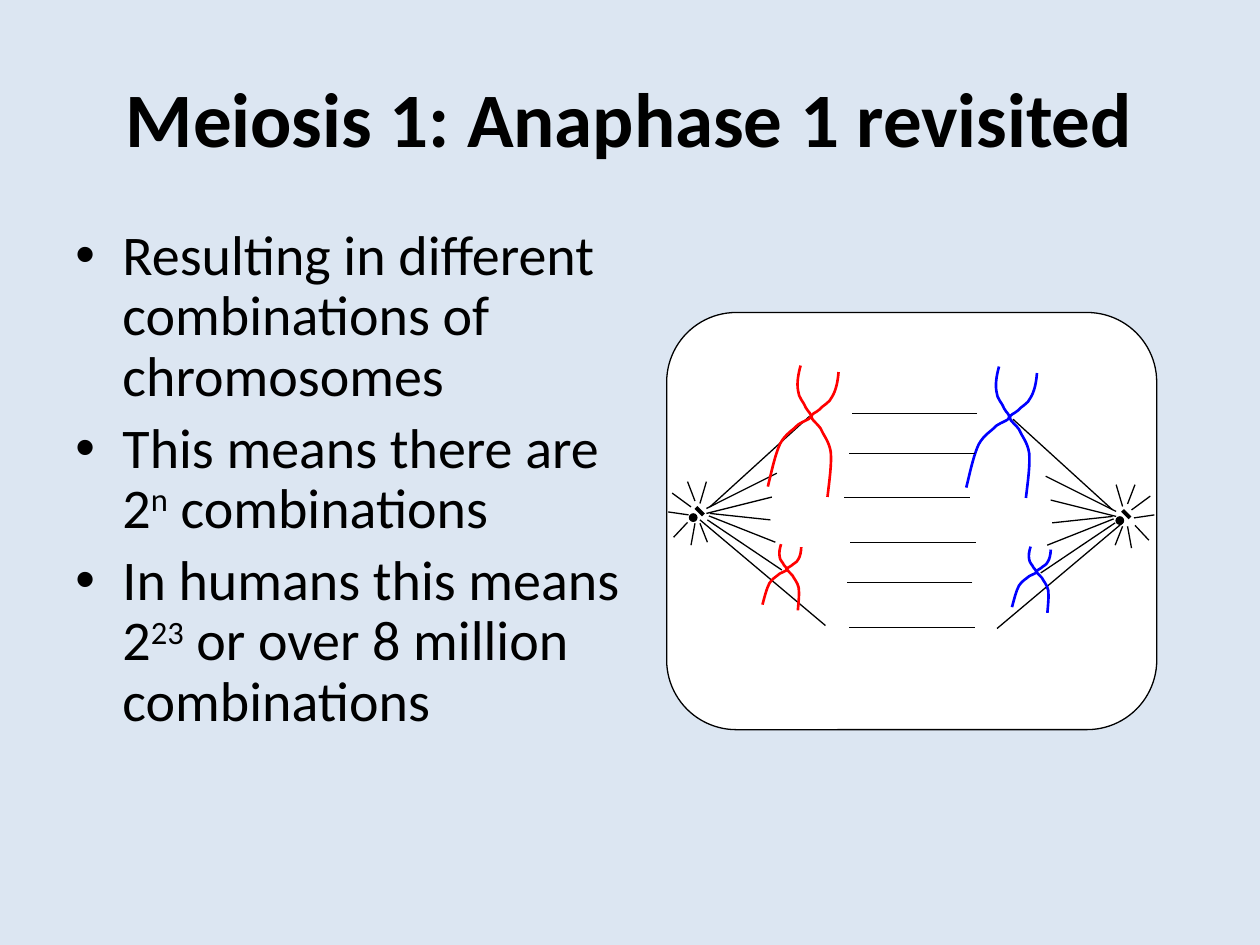
from lxml.etree import SubElement
from pptx import Presentation
from pptx.dml.color import RGBColor
from pptx.enum.shapes import MSO_CONNECTOR, MSO_SHAPE
from pptx.enum.text import MSO_ANCHOR, PP_ALIGN
from pptx.oxml.ns import qn
from pptx.util import Cm, Pt

BACKGROUND = RGBColor(0xDC, 0xE6, 0xF2)
BLACK = RGBColor(0x00, 0x00, 0x00)
WHITE = RGBColor(0xFF, 0xFF, 0xFF)
RED = RGBColor(0xFF, 0x00, 0x00)
BLUE = RGBColor(0x00, 0x00, 0xFF)
FONT = "Calibri"

TITLE = "Meiosis 1: Anaphase 1 revisited"
# Each bullet: text, superscript, text
BULLETS = [
    ("Resulting in different combinations of chromosomes", "", ""),
    ("This means there are 2", "n", " combinations"),
    ("In humans this means 2", "23", " or over 8 million combinations"),
]

# All drawing data below is in centimetres.
# Aster rays: inward and down from the pole, start then end
RAYS = [
    (0.20, -0.13, 2.21, -1.96), (0.13, -0.10, 1.55, -0.81),
    (0.13, 0, 1.45, -0.33), (0.20, 0, 1.42, 0.13),
    (0.18, 0.05, 1.52, 0.58), (0.15, 0.13, 1.65, 1.14),
    (0, 0.13, 2.53, 2.26), (-0.10, -0.25, -0.25, -0.64),
    (-0.18, -0.13, -0.56, -0.41), (-0.23, 0.03, -0.64, -0.03),
    (-0.53, 0.48, -0.25, 0.18), (-0.10, 0.20, -0.18, 0.64),
    (0, -0.20, 0.13, -0.64), (0, 0.20, 0.15, 0.58),
]
# Poles: x, y, inward direction, centriole x, centriole y
POLES = [(9.19, 4.11, -1, 9.19, 3.99), (0.67, 4.05, 1, 0.59, 3.93)]
# Fibres between the poles: left end and height
FIBRES = [(3.73, 2.03), (3.68, 2.84), (3.63, 5.44),
          (3.58, 3.73), (3.70, 4.63), (3.68, 6.35)]
FIBRE_LENGTH = 2.53
# One chromatid as a chain of cubic Bezier points
CHROMATID = [
    (0.66, 0), (0.61, 0.18), (0.58, 0.36), (0.61, 0.51),
    (0.61, 0.64), (0.74, 0.76), (0.76, 0.84),
    (0.81, 0.94), (0.89, 0.97), (0.86, 1.04),
    (0.84, 1.09), (0.71, 1.12), (0.61, 1.19),
    (0.51, 1.30), (0.36, 1.37), (0.25, 1.57),
    (0.15, 1.78), (0.08, 2.11), (0, 2.44),
]
CHROMATID_WIDTH = 0.89
# The sister chromatid is mirrored, shifted and turned
SISTER_SHIFT = (0.76, 0.13)
SISTER_ANGLE = 20.2
# Chromosomes: x, y, colour, horizontal and vertical scale
CHROMOSOMES = [
    (6.04, 1.09, BLUE, 1, 1), (2.04, 1.07, RED, 1, 1),
    (6.96, 4.72, BLUE, 0.57, 0.5), (1.93, 4.67, RED, 0.57, 0.5),
]


def style_font(font, size, bold=False):
    font.name = FONT
    font.size = Pt(size)
    font.bold = bold
    font.color.rgb = BLACK


def add_text_frame(page, left, top, width, height):
    box = page.shapes.add_textbox(Cm(left), Cm(top), Cm(width), Cm(height))
    box.text_frame.word_wrap = True
    return box.text_frame


def add_title(page, left, top, width, height):
    frame = add_text_frame(page, left, top, width, height)
    frame.vertical_anchor = MSO_ANCHOR.MIDDLE
    frame.text = TITLE
    para = frame.paragraphs[0]
    para.alignment = PP_ALIGN.CENTER
    style_font(para.runs[0].font, 44, bold=True)


def add_bullets(page, left, top, width, height):
    frame = add_text_frame(page, left, top, width, height)
    for index, parts in enumerate(BULLETS):
        para = frame.add_paragraph() if index else frame.paragraphs[0]
        para.line_spacing = 0.9
        para.space_before = Pt(6.4 if index else 0)
        properties = para._p.get_or_add_pPr()
        properties.set("marL", str(Cm(0.95)))
        properties.set("indent", str(Cm(-0.95)))
        SubElement(properties, qn("a:buFont"), typeface="Arial")
        SubElement(properties, qn("a:buChar"), char="•")
        for position, text in enumerate(filter(None, parts)):
            span = para.add_run()
            span.text = text
            style_font(span.font, 32)
            if position == 1:
                span._r.get_or_add_rPr().set("baseline", "30000")


def set_line(shape, colour, width):
    shape.line.color.rgb = colour
    shape.line.width = Pt(width)


def add_line(group, start, end, width=0.75):
    line = group.shapes.add_connector(
        MSO_CONNECTOR.STRAIGHT, *(Cm(value) for value in (*start, *end)))
    set_line(line, BLACK, width)
    SubElement(line._element.spPr, qn("a:effectLst"))


def add_solid(group, kind, left, top, width, height, fill):
    shape = group.shapes.add_shape(
        kind, Cm(left), Cm(top), Cm(width), Cm(height))
    shape.shadow.inherit = False
    shape.fill.solid()
    shape.fill.fore_color.rgb = fill
    set_line(shape, BLACK, 0.75)
    return shape


def add_aster(group, x, y, inward):
    for x1, y1, x2, y2 in RAYS:
        add_line(group, (x + inward * x1, y + y1), (x + inward * x2, y + y2))


def add_centriole(group, x, y):
    add_line(group, (x, y), (x + 0.15, y + 0.15), 2.25)
    add_solid(group, MSO_SHAPE.OVAL, x - 0.13, y + 0.13, 0.15, 0.15, BLACK)


def add_curve(group, points, colour):
    """Draw a chain of cubic Bezier curves through the given points."""
    start, *others = [(Cm(x), Cm(y)) for x, y in points]
    builder = group.shapes.build_freeform(*start)
    builder.add_line_segments(others, close=False)
    shape = builder.convert_to_shape()
    # Every three line points become the points of one curve
    segments = list(shape._element.iter(qn("a:lnTo")))
    outline = segments[0].getparent()
    for first in range(0, len(segments), 3):
        curve = SubElement(outline, qn("a:cubicBezTo"))
        for segment in segments[first:first + 3]:
            curve.append(segment[0])
            outline.remove(segment)
    shape.shadow.inherit = False
    shape.fill.background()
    set_line(shape, colour, 1.5)
    return shape


def add_chromosome(group, x, y, colour, scale_x, scale_y):
    shift_x, shift_y = SISTER_SHIFT
    sister = [(shift_x + CHROMATID_WIDTH - px, shift_y + py)
              for px, py in CHROMATID]
    for chromatid, angle in ((CHROMATID, 0), (sister, SISTER_ANGLE)):
        points = [(x + scale_x * px, y + scale_y * py)
                  for px, py in chromatid]
        add_curve(group, points, colour).rotation = angle


def add_cell(page, left, top, width, height):
    group = page.shapes.add_group_shape()
    # Cell membrane
    add_solid(group, MSO_SHAPE.ROUNDED_RECTANGLE,
              left, top, width, height, WHITE).adjustments[0] = 0.167
    # Spindle poles
    for x, y, inward, centriole_x, centriole_y in POLES:
        add_centriole(group, left + centriole_x, top + centriole_y)
        add_aster(group, left + x, top + y, inward)
    # Separating chromosomes
    for x, y, *look in CHROMOSOMES:
        add_chromosome(group, left + x, top + y, *look)
    # Fibres between the poles
    for x, y in FIBRES:
        add_line(group, (left + x + FIBRE_LENGTH, top + y),
                 (left + x, top + y))


def main():
    deck = Presentation()
    deck.slide_width, deck.slide_height = Cm(25.4), Cm(19.05)
    page = deck.slides.add_slide(deck.slide_layouts[6])
    page.background.fill.solid()
    page.background.fill.fore_color.rgb = BACKGROUND
    add_title(page, 1.27, 0.76, 22.86, 3.18)
    add_bullets(page, 1.27, 4.45, 11.63, 12.57)
    add_cell(page, 13.44, 6.3, 9.88, 8.41)
    deck.save("out.pptx")


if __name__ == "__main__":
    main()
